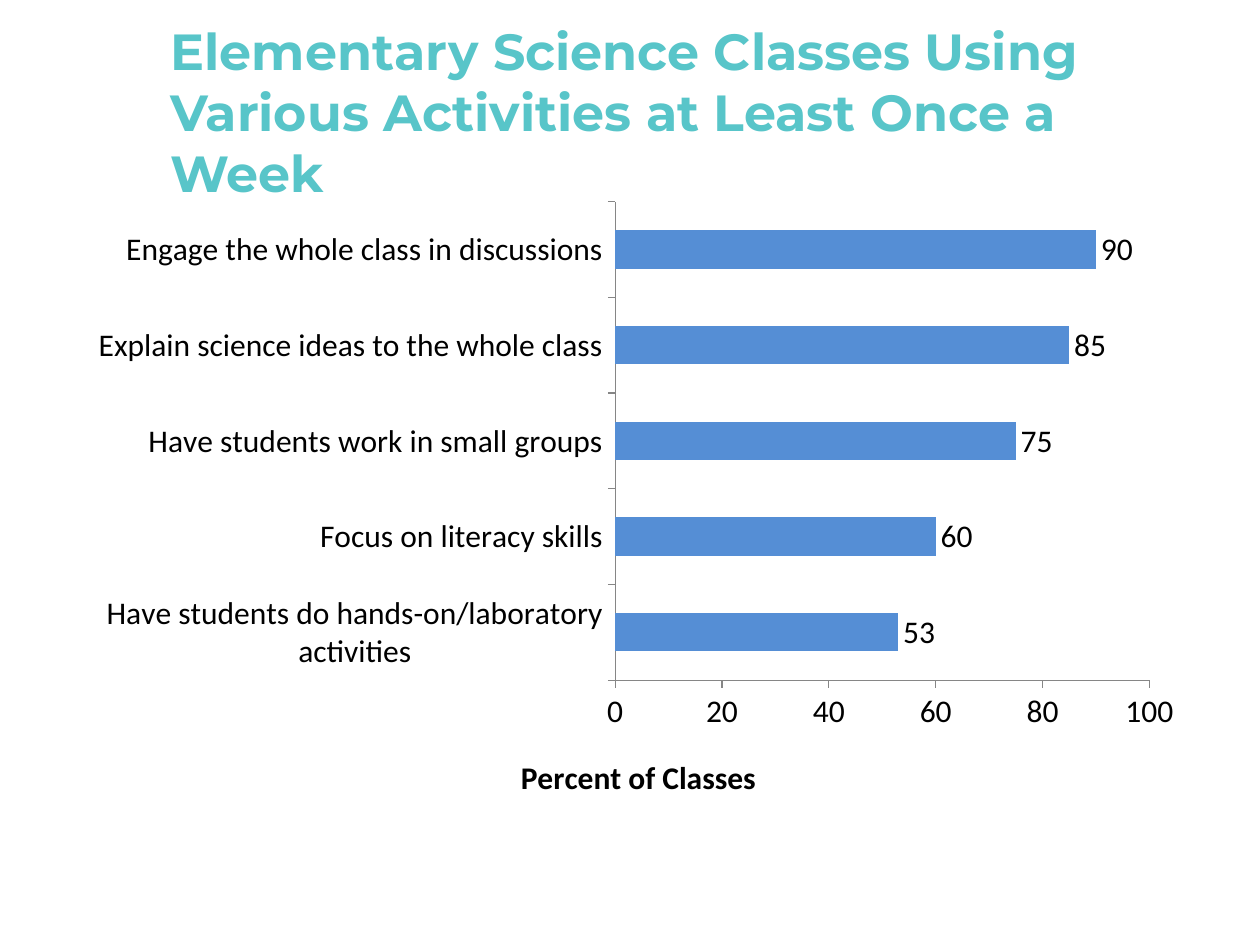
from lxml.etree import SubElement
from pptx import Presentation
from pptx.chart.data import CategoryChartData
from pptx.dml.color import RGBColor
from pptx.enum.chart import XL_CHART_TYPE, XL_LABEL_POSITION, XL_TICK_MARK
from pptx.enum.text import MSO_ANCHOR, MSO_AUTO_SIZE, PP_ALIGN
from pptx.oxml.ns import qn
from pptx.util import Emu, Pt

PIXEL = 914400 // 126
BLACK, TEAL, BLUE, GRAY = "000000", "58C5C9", "558ED5", "868686"
ACTIVITIES = {
    "Have students do hands-on/laboratory activities": 53,
    "Focus on literacy skills": 60,
    "Have students work in small groups": 75,
    "Explain science ideas to the whole class": 85,
    "Engage the whole class in discussions": 90,
}


def px(length):
    return Emu(length * PIXEL)


def color(hex_value):
    return RGBColor.from_string(hex_value)


def style_font(font, name, size, hex_value, bold=False):
    font.name = name
    font.size = Pt(size)
    font.bold = bold
    font.color.rgb = color(hex_value)


def place(shape, left, top, width, height):
    shape.left, shape.top = px(left), px(top)
    shape.width, shape.height = px(width), px(height)


def set_title(slide, text):
    title = slide.shapes.title
    place(title, 158, 32, 1040, 158)
    frame = title.text_frame
    frame.text = text
    frame.word_wrap = True
    frame.auto_size = MSO_AUTO_SIZE.NONE
    frame.vertical_anchor = MSO_ANCHOR.MIDDLE
    paragraph = frame.paragraphs[0]
    paragraph.alignment = PP_ALIGN.LEFT
    style_font(paragraph.runs[0].font, "Montserrat", 29, TEAL, True)


def set_layout(parent, predecessor, **settings):
    for existing in parent.findall(qn("c:layout")):
        parent.remove(existing)
    layout = SubElement(parent, qn("c:layout"))
    predecessor.addnext(layout) if predecessor is not None else parent.insert(0, layout)
    manual = SubElement(layout, qn("c:manualLayout"))
    for name, value in settings.items():
        SubElement(manual, qn(f"c:{name}")).set("val", str(value))


def style_axis(axis):
    axis.has_major_gridlines = False
    axis.major_tick_mark = XL_TICK_MARK.OUTSIDE
    axis.minor_tick_mark = XL_TICK_MARK.NONE
    axis.format.line.color.rgb = color(GRAY)
    axis.format.line.width = Pt(0.75)
    style_font(axis.tick_labels.font, "Calibri", 18, BLACK)


def set_axis_title(axis, text):
    axis.has_title = True
    frame = axis.axis_title.text_frame
    frame.text = text
    style_font(frame.paragraphs[0].runs[0].font, "Calibri", 18, BLACK, True)
    title = axis.axis_title._element
    set_layout(title, title.find(qn("c:tx")),
               xMode="edge", yMode="edge", x=0.39, y=0.89)


def style_bars(plot):
    plot.gap_width = 150
    plot.vary_by_categories = False
    fill = plot.series[0].format.fill
    fill.solid()
    fill.fore_color.rgb = color(BLUE)
    plot.has_data_labels = True
    labels = plot.data_labels
    labels.show_value = True
    labels.position = XL_LABEL_POSITION.OUTSIDE_END
    style_font(labels.font, "Calibri", 18, BLACK)


def add_bar_chart(slide):
    data = CategoryChartData()
    data.categories = list(ACTIVITIES)
    data.add_series("Series 1", list(ACTIVITIES.values()))
    chart = slide.shapes.add_chart(
        XL_CHART_TYPE.BAR_CLUSTERED, px(81), px(189), px(1113), px(630), data
    ).chart
    chart.has_title = False
    chart.has_legend = False
    style_font(chart.font, "Calibri", 18, BLACK)
    style_axis(chart.category_axis)
    style_axis(chart.value_axis)
    chart.value_axis.minimum_scale = 0
    chart.value_axis.maximum_scale = 100
    chart.value_axis.major_unit = 20
    set_axis_title(chart.value_axis, "Percent of Classes")
    style_bars(chart.plots[0])
    plot_area = chart._chartSpace.chart.plotArea
    set_layout(plot_area, None, layoutTarget="inner", xMode="edge", yMode="edge",
               x=0.48, y=0.02, w=0.48, h=0.76)


def main():
    presentation = Presentation()
    presentation.slide_width, presentation.slide_height = px(1260), px(945)
    slide = presentation.slides.add_slide(presentation.slide_layouts[5])
    add_bar_chart(slide)
    set_title(slide, "Elementary Science Classes Using Various Activities at Least Once a Week")
    presentation.save("out.pptx")


if __name__ == "__main__":
    main()
